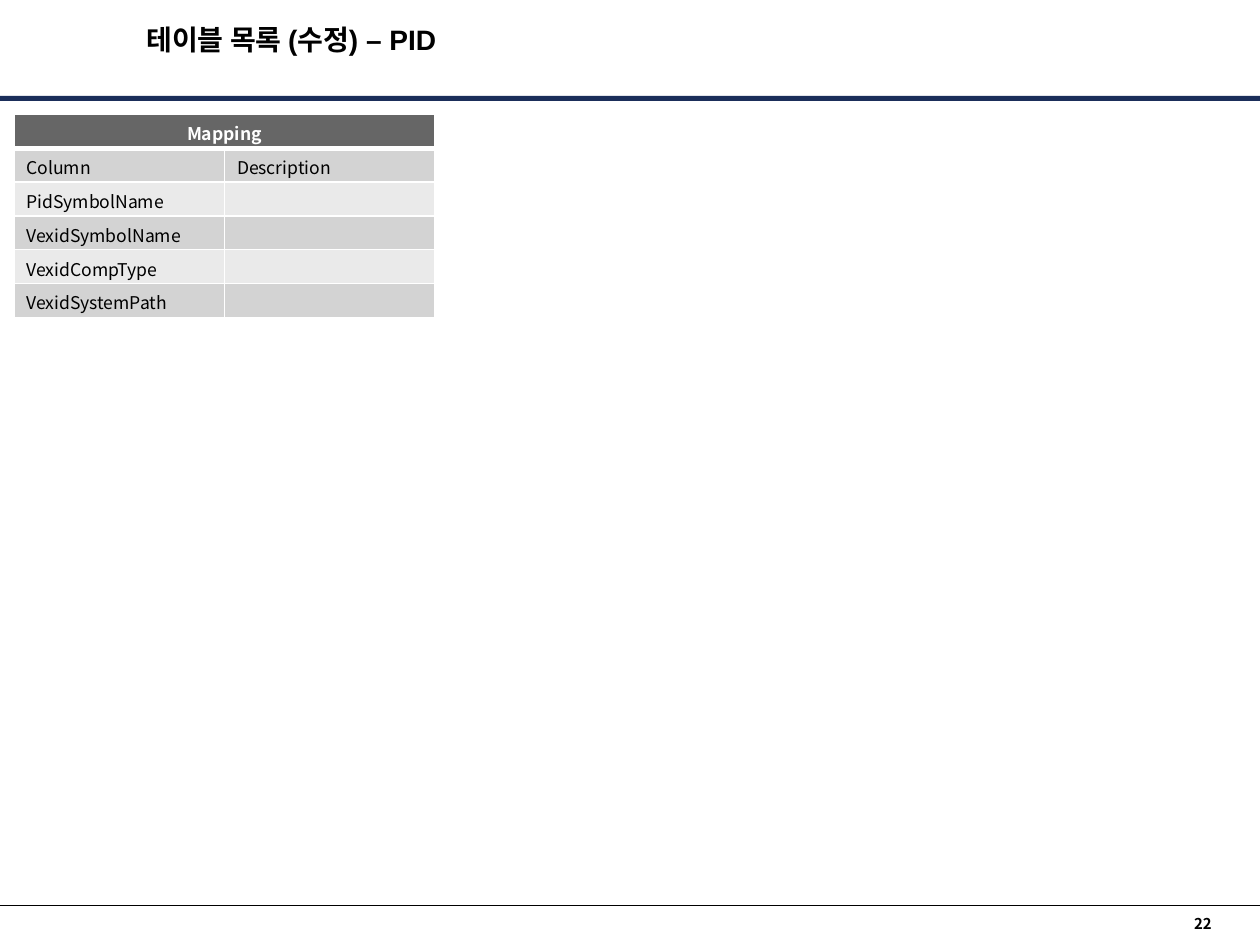
from lxml.etree import SubElement
from pptx import Presentation
from pptx.dml.color import RGBColor
from pptx.enum.shapes import MSO_CONNECTOR as Connector, MSO_SHAPE as Shape
from pptx.enum.text import MSO_ANCHOR as Anchor, PP_ALIGN as Align
from pptx.oxml.ns import qn
from pptx.util import Cm, Pt

# Content
TITLE = "테이블 목록 (수정) – PID"
PAGE_NUMBER = "22"
MAPPING = [
    ("Mapping", ""),
    ("Column", "Description"),
    ("PidSymbolName", ""),
    ("VexidSymbolName", ""),
    ("VexidCompType", ""),
    ("VexidSystemPath", ""),
]
COLORS = {"navy": "1B2E5A", "text": "000000", "white": "FFFFFF",
          "header": "666666", "odd": "D3D3D3", "even": "EAEAEA"}
KOREAN_FONT = "Noto Sans CJK KR"

# Layout in centimetres
WIDTH, HEIGHT = 25.32, 19.0
COLUMN_WIDTH, ROW_HEIGHT = 4.23, 0.68


def color(name):
    return RGBColor.from_string(COLORS[name])


def style(paragraph, size, font_name, color_name, bold, align):
    font = paragraph.font
    font.size, font.name, font.bold = Pt(size), font_name, bold
    font.color.rgb = color(color_name)
    paragraph.alignment = align


def add_text(slide, box, text, margins, wrap, **look):
    frame = slide.shapes.add_textbox(*map(Cm, box)).text_frame
    frame.word_wrap = wrap
    frame.margin_left = frame.margin_right = Cm(margins[0])
    frame.margin_top = frame.margin_bottom = Cm(margins[1])
    paragraph = frame.paragraphs[0]
    paragraph.text = text
    style(paragraph, **look)
    return paragraph


def add_borders(cell, top, bottom):
    properties = cell._tc.get_or_add_tcPr()
    for side, points in (("L", 1), ("R", 1), ("T", top), ("B", bottom)):
        line = SubElement(properties, qn(f"a:ln{side}"), w=str(Pt(points)))
        fill = SubElement(line, qn("a:solidFill"))
        SubElement(fill, qn("a:srgbClr"), val=COLORS["white"])


def add_mapping(slide):
    frame = slide.shapes.add_table(
        len(MAPPING), 2, Cm(0.28), Cm(2.3),
        Cm(2 * COLUMN_WIDTH), Cm(len(MAPPING) * ROW_HEIGHT))
    table = frame.table
    for column in table.columns:
        column.width = Cm(COLUMN_WIDTH)
    for r, labels in enumerate(MAPPING):
        table.rows[r].height = Cm(ROW_HEIGHT)
        header = r == 0
        for c, label in enumerate(labels):
            cell = table.cell(r, c)
            add_borders(cell, 3 if r == 1 else 1, 3 if header else 1)
            cell.fill.solid()
            cell.fill.fore_color.rgb = color(
                "header" if header else "odd" if r % 2 else "even")
            cell.vertical_anchor = Anchor.MIDDLE
            cell.margin_top, cell.margin_bottom = Cm(0.11), Cm(0.03)
            cell.text = label
            style(cell.text_frame.paragraphs[0], 10, KOREAN_FONT,
                  "white" if header else "text", header,
                  Align.CENTER if header else Align.LEFT)
    table.cell(0, 0).merge(table.cell(0, 1))


def main():
    deck = Presentation()
    deck.slide_width, deck.slide_height = Cm(WIDTH), Cm(HEIGHT)
    slide = deck.slides.add_slide(deck.slide_layouts[6])

    # Header bar
    bar = slide.shapes.add_shape(Shape.RECTANGLE, 0, Cm(1.93), Cm(WIDTH), Cm(0.1))
    bar.shadow.inherit = False
    bar.fill.solid()
    bar.fill.fore_color.rgb = color("navy")
    bar.line.fill.background()

    # Footer rule and page number
    rule = slide.shapes.add_connector(
        Connector.STRAIGHT, 0, Cm(18.21), Cm(WIDTH), Cm(18.21))
    rule.line.color.rgb = color("text")
    rule.line.width = Pt(0.75)
    SubElement(rule._element.spPr, qn("a:effectLst"))
    add_text(slide, (23.95, 18.39, 0.4, 0.36), PAGE_NUMBER, (0, 0), False,
             size=8.5, font_name=KOREAN_FONT, color_name="text", bold=True,
             align=Align.RIGHT)

    # Title
    title = add_text(slide, (0.33, 0.33, 11.05, 1.19), TITLE, (0.25, 0.13), True,
                     size=16, font_name="Arial", color_name="text", bold=True,
                     align=Align.CENTER)
    run_properties = title.runs[0].font._element
    SubElement(run_properties, qn("a:ea"), typeface=KOREAN_FONT)

    # Mapping table
    add_mapping(slide)
    deck.save("out.pptx")


if __name__ == "__main__":
    main()
